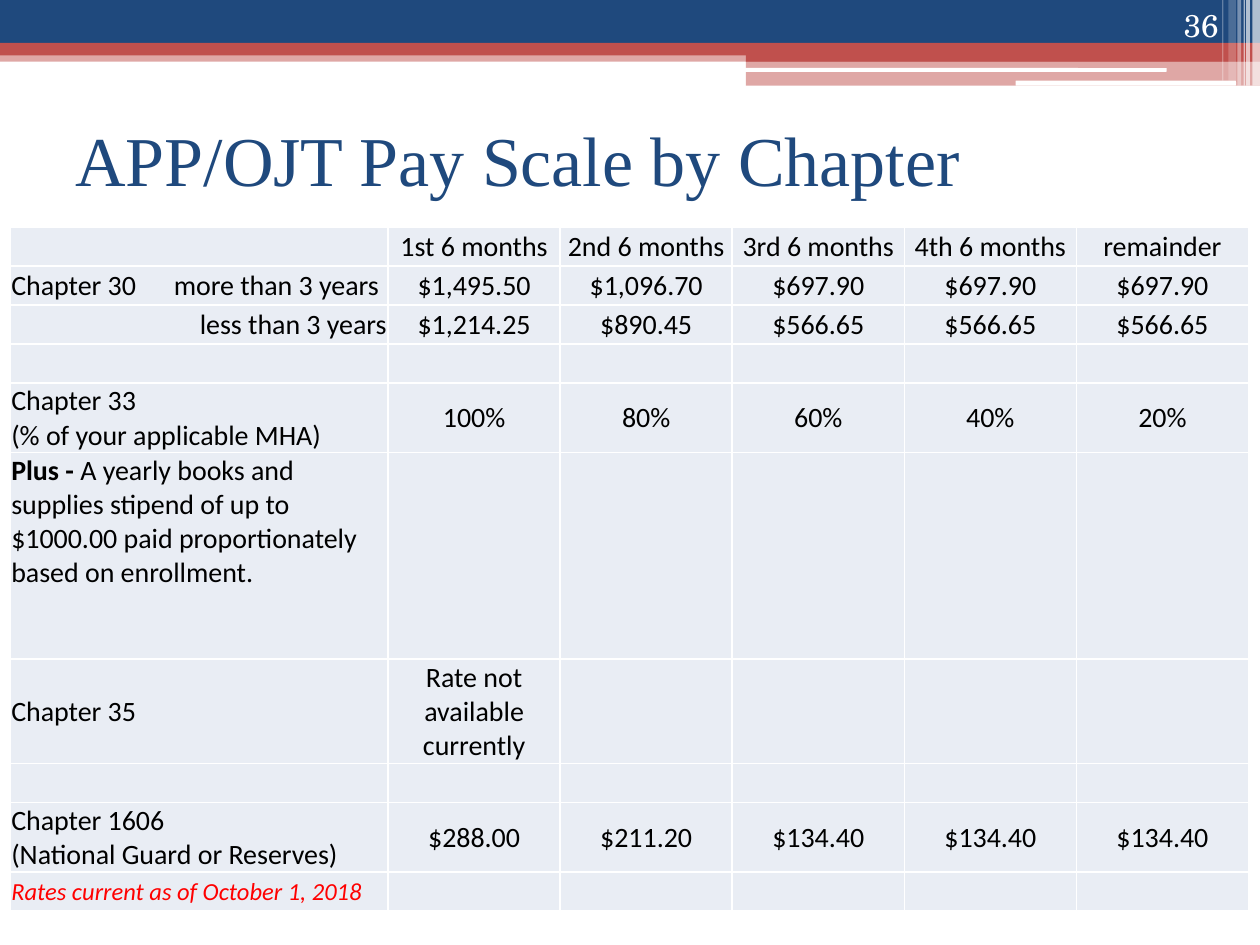
import pptx
import pptx.util
import pptx.dml.color
import pptx.enum.shapes
import pptx.enum.text
import pptx.oxml
from pptx.oxml.ns import qn
from lxml import etree

Inches = pptx.util.Inches
Pt = pptx.util.Pt
ALIGN = pptx.enum.text.PP_ALIGN
ANCHOR = pptx.enum.text.MSO_ANCHOR
SHAPES = pptx.enum.shapes.MSO_SHAPE

NAVY, RED, WHITE, BLACK = "1F497D", "C0504D", "FFFFFF", "000000"
CELL_FILL, NOTE_RED = "E9EDF4", "FF0000"

# left, top, width, height, colour, opacity in percent
BANDS = [
    (0, 0.4, 10, 0.09, RED, 50),
    (0, 0, 10, 0.34, NAVY, 100),
    (0, 0.34, 10, 0.1, RED, 100),
    (5.92, 0.39, 4.08, 0.1, RED, 100),
    (5.92, 0.48, 4.08, 0.2, RED, 50),
]
ROUNDED_BARS = [
    (5.91, 0.54, 3.35, 0.03, WHITE, 100),
    (8.06, 0.64, 1.75, 0.04, WHITE, 100),
]
# left, width, height, opacity in percent
STRIPES = [
    (9.94, 0.06, 0.68, 65),
    (9.89, 0.03, 0.68, 65),
    (9.87, 0.01, 0.68, 60),
    (9.82, 0.03, 0.68, 40),
    (9.75, 0.06, 0.64, 20),
    (9.7, 0.01, 0.64, 30),
]

TABLE_LEFT, TABLE_TOP, TABLE_WIDTH, LABEL_WIDTH = 0.08, 1.8, 9.83, 3
TAB_STOP = 1.29
# row height, label, values
ROWS = [
    (0.31, "", ["1st 6 months", "2nd 6 months", "3rd 6 months", "4th 6 months", "remainder"]),
    (0.31, "Chapter 30\tmore than 3 years", ["$1,495.50", "$1,096.70", "$697.90", "$697.90", "$697.90"]),
    (0.31, "less than 3 years", ["$1,214.25", "$890.45", "$566.65", "$566.65", "$566.65"]),
    (0.31, "", []),
    (0.55, "Chapter 33\n(% of your applicable MHA)", ["100%", "80%", "60%", "40%", "20%"]),
    (1.64, "Plus - |A yearly books and supplies stipend of up to $1000.00 "
           "paid proportionately based on enrollment.", []),
    (0.83, "Chapter 35", ["Rate not available currently"]),
    (0.31, "", []),
    (0.55, "Chapter 1606\n(National Guard or Reserves)",
     ["$288.00", "$211.20", "$134.40", "$134.40", "$134.40"]),
    (0.31, "Rates current as of October 1, 2018", []),
]
RIGHT_ROW, PLUS_ROW, NOTE_ROW = 2, 5, 9


def rgb(color):
    return pptx.dml.color.RGBColor.from_string(color)


def style_font(font, name, size, color):
    font.name, font.size = name, Pt(size)
    font.color.rgb = rgb(color)


def add_bar(slide, kind, left, top, width, height, color, opacity):
    shape = slide.shapes.add_shape(kind, Inches(left), Inches(top), Inches(width), Inches(height))
    shape.shadow.inherit = False
    shape.line.fill.background()
    shape.fill.solid()
    shape.fill.fore_color.rgb = rgb(color)
    if opacity < 100:
        color_element = shape.fill._xPr.find(qn("a:solidFill"))[0]
        etree.SubElement(color_element, qn("a:alpha"), val=str(opacity * 1000))


def add_text(slide, box, text, font, size, color, anchor, align):
    frame = slide.shapes.add_textbox(*map(Inches, box)).text_frame
    frame.word_wrap = True
    frame.vertical_anchor = anchor
    paragraph = frame.paragraphs[0]
    paragraph.text, paragraph.alignment = text, align
    style_font(paragraph.font, font, size, color)


def add_borders(cell):
    properties = cell._tc.get_or_add_tcPr()
    for index, side in enumerate(("lnL", "lnR", "lnT", "lnB")):
        line = etree.Element(qn(f"a:{side}"), w=str(Pt(1)))
        fill = etree.SubElement(line, qn("a:solidFill"))
        etree.SubElement(fill, qn("a:srgbClr"), val=WHITE)
        properties.insert(index, line)


def add_tab_stop(paragraph):
    tabs = etree.Element(qn("a:tabLst"))
    etree.SubElement(tabs, qn("a:tab"), pos=str(Inches(TAB_STOP)), algn="l")
    paragraph._p.get_or_add_pPr().insert(0, tabs)


def fill_cell(cell, text, align, size=16, color=BLACK, italic=False):
    """Write the text, one paragraph a line; a part before "|" is bold."""
    cell.fill.solid()
    cell.fill.fore_color.rgb = rgb(CELL_FILL)
    add_borders(cell)
    cell.margin_left = cell.margin_right = cell.margin_top = Inches(0.01)
    cell.margin_bottom = 0
    cell.vertical_anchor = ANCHOR.MIDDLE
    bold_part, separator, rest = text.rpartition("|")
    cell.text_frame.text = rest
    for paragraph in cell.text_frame.paragraphs:
        paragraph.alignment = align
        style_font(paragraph.font, "Calibri", size, color)
        paragraph.font.italic = italic
        if "\t" in text:
            add_tab_stop(paragraph)
    if separator:
        paragraph = cell.text_frame.paragraphs[0]
        paragraph.runs[0].text = bold_part
        paragraph.runs[0].font.bold = True
        paragraph.add_run().text = rest


def add_pay_table(slide):
    value_count = len(ROWS[0][2])
    table = slide.shapes.add_table(
        len(ROWS), value_count + 1, Inches(TABLE_LEFT), Inches(TABLE_TOP),
        Inches(TABLE_WIDTH), Inches(sum(row[0] for row in ROWS))).table
    table.first_row = table.horz_banding = False
    table.columns[0].width = Inches(LABEL_WIDTH)
    for column in range(1, value_count + 1):
        table.columns[column].width = Inches((TABLE_WIDTH - LABEL_WIDTH) / value_count)
    for index, (height, label, values) in enumerate(ROWS):
        table.rows[index].height = Inches(height)
        label_align = ALIGN.RIGHT if index == RIGHT_ROW else ALIGN.LEFT
        note_style = (14, NOTE_RED, True) if index == NOTE_ROW else ()
        fill_cell(table.cell(index, 0), label, label_align, *note_style)
        for column in range(value_count):
            value = values[column] if column < len(values) else ""
            fill_cell(table.cell(index, column + 1), value, ALIGN.CENTER)
    table.cell(PLUS_ROW, 0).vertical_anchor = ANCHOR.TOP


def main():
    presentation = pptx.Presentation()
    presentation.slide_width, presentation.slide_height = Inches(10), Inches(7.5)
    slide = presentation.slides.add_slide(presentation.slide_layouts[6])
    for band in BANDS:
        add_bar(slide, SHAPES.RECTANGLE, *band)
    for bar in ROUNDED_BARS:
        add_bar(slide, SHAPES.ROUNDED_RECTANGLE, *bar)
    for left, width, height, opacity in STRIPES:
        add_bar(slide, SHAPES.RECTANGLE, left, 0, width, height, WHITE, opacity)
    add_text(slide, (0.5, 0.67, 9, 1.17), "APP/OJT Pay Scale by Chapter",
             "Times New Roman", 40, NAVY, ANCHOR.MIDDLE, ALIGN.LEFT)
    add_text(slide, (8.94, 0, 0.83, 0.4), "36",
             "TeX Gyre Schola", 18, WHITE, ANCHOR.BOTTOM, ALIGN.RIGHT)
    add_pay_table(slide)
    presentation.save("out.pptx")


if __name__ == "__main__":
    main()
